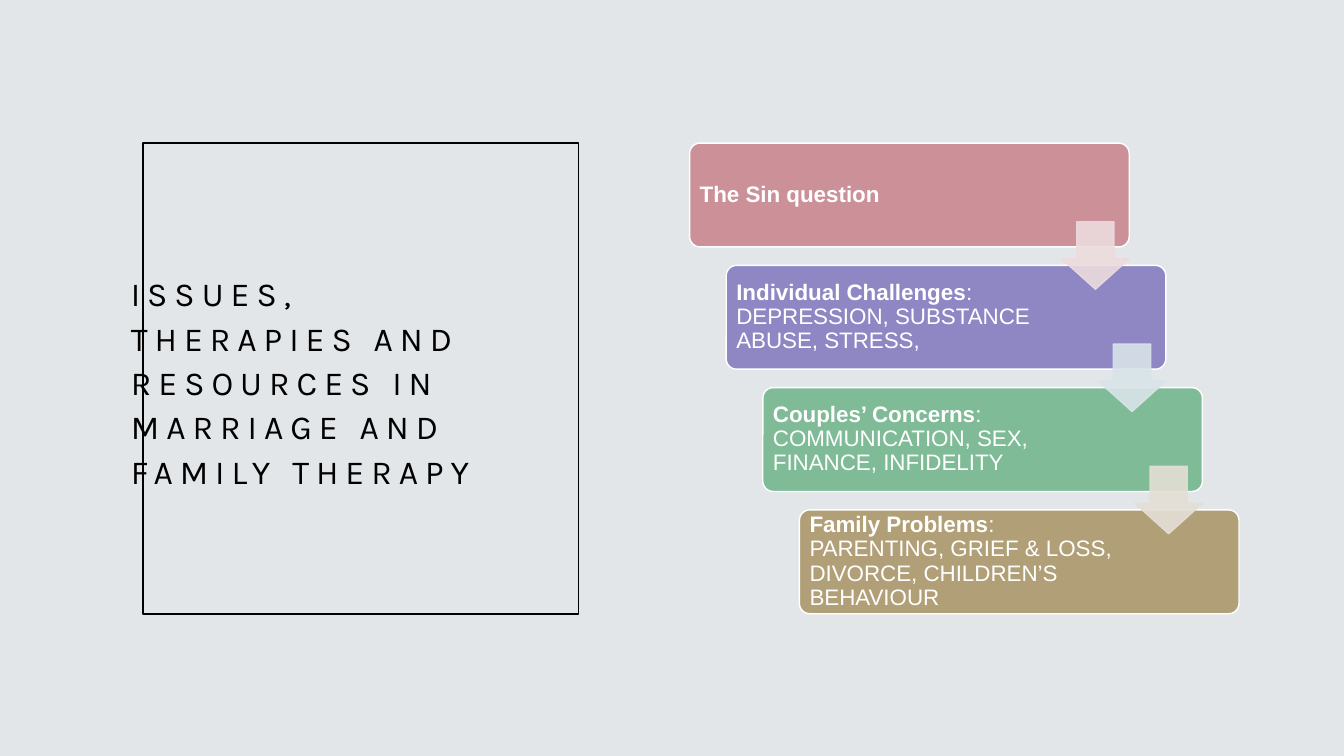
from lxml import etree
from pptx import Presentation
from pptx.dml.color import RGBColor
from pptx.enum.shapes import MSO_SHAPE
from pptx.enum.text import MSO_ANCHOR, PP_ALIGN
from pptx.oxml.ns import qn
from pptx.util import Inches, Pt

RECTANGLE = MSO_SHAPE.RECTANGLE
ROUNDED = MSO_SHAPE.ROUNDED_RECTANGLE
DOWN_ARROW = MSO_SHAPE.DOWN_ARROW
MIDDLE = MSO_ANCHOR.MIDDLE
LEFT = PP_ALIGN.LEFT

BACKGROUND = RGBColor(0xE2, 0xE6, 0xE8)
BLACK = RGBColor(0x00, 0x00, 0x00)
WHITE = RGBColor(0xFF, 0xFF, 0xFF)
ROSE = RGBColor(0xCC, 0x90, 0x99)
VIOLET = RGBColor(0x8F, 0x87, 0xC4)
GREEN = RGBColor(0x7F, 0xBB, 0x97)
TAN = RGBColor(0xB1, 0x9F, 0x77)
PALE_ROSE = RGBColor(0xEC, 0xDB, 0xDE)
PALE_BLUE = RGBColor(0xD9, 0xE4, 0xE8)
PALE_TAN = RGBColor(0xE4, 0xDF, 0xD6)

TOP = 1.42
STAIR_LEFT = 6.84
STEP_X, STEP_Y = 0.363, 1.213
CARD_WIDTH, CARD_HEIGHT = 4.36, 1.03
ARROW_SIZE = 0.67
ARROW_DROP = 0.78
CARD_INSET, ARROW_ROOM = 0.07, 1.06

TITLE = "ISSUES, THERAPIES AND RESOURCES IN MARRIAGE AND FAMILY THERAPY"
CARDS = [
    ("The Sin question", "", ROSE),
    ("Individual Challenges", ": DEPRESSION, SUBSTANCE ABUSE, STRESS,", VIOLET),
    ("Couples’ Concerns", ": COMMUNICATION, SEX, FINANCE, INFIDELITY", GREEN),
    ("Family Problems", ": PARENTING, GRIEF & LOSS, DIVORCE, CHILDREN’S BEHAVIOUR", TAN),
]
ARROW_COLORS = [PALE_ROSE, PALE_BLUE, PALE_TAN]


def add_box(slide, kind, box, fill, line):
    """Add a preset shape with a one-point outline and an optional fill."""
    shape = slide.shapes.add_shape(kind, *map(Inches, box))
    shape.shadow.inherit = False
    if fill is None:
        shape.fill.background()
    else:
        shape.fill.solid()
        shape.fill.fore_color.rgb = fill
    shape.line.color.rgb = line
    shape.line.width = Pt(1)
    return shape


def style_run(run, font, size, color, bold=False):
    """Set the font of a run."""
    run.font.name = font
    run.font.size = Pt(size)
    run.font.color.rgb = color
    run.font.bold = bold


def add_title(slide):
    """Add the frame and the widely spaced title that overlaps it."""
    add_box(slide, RECTANGLE, (TOP, TOP, 4.32, 4.67), None, BLACK)
    title = slide.shapes.add_textbox(*map(Inches, (1.2, 2.56, 3.97, 2.42)))
    frame = title.text_frame
    frame.word_wrap = True
    frame.vertical_anchor = MIDDLE
    frame.text = TITLE
    paragraph = frame.paragraphs[0]
    paragraph.line_spacing = 1.1
    run = paragraph.runs[0]
    style_run(run, "Karla", 24, BLACK)
    run.font._element.set("spc", "500")


def add_card(slide, step, heading, details, color):
    """Add one stair card with a bold heading and plain details."""
    box = (STAIR_LEFT + step * STEP_X, TOP + step * STEP_Y, CARD_WIDTH, CARD_HEIGHT)
    card = add_box(slide, ROUNDED, box, color, WHITE)
    card.adjustments[0] = 0.1
    frame = card.text_frame
    frame.word_wrap = True
    frame.vertical_anchor = MIDDLE
    frame.margin_left = frame.margin_top = frame.margin_bottom = Inches(CARD_INSET)
    frame.margin_right = Inches(ARROW_ROOM)
    paragraph = frame.paragraphs[0]
    paragraph.alignment = LEFT
    paragraph.line_spacing = 0.9
    for words, bold in ((heading, True), (details, False)):
        if words:
            run = paragraph.add_run()
            run.text = words
            style_run(run, "Arial", 16, WHITE, bold)


def add_step_arrow(slide, step, color):
    """Add the translucent arrow from one card to the next."""
    left = STAIR_LEFT + CARD_WIDTH - ARROW_SIZE + step * STEP_X
    top = TOP + ARROW_DROP + step * STEP_Y
    arrow = add_box(slide, DOWN_ARROW, (left, top, ARROW_SIZE, ARROW_SIZE), color, color)
    arrow.adjustments[0] = 0.55
    arrow.adjustments[1] = 0.45
    for tint in arrow._element.spPr.iter(qn("a:srgbClr")):
        etree.SubElement(tint, qn("a:alpha")).set("val", "90000")


def main():
    """Build the slide and save it."""
    deck = Presentation()
    deck.slide_width, deck.slide_height = Inches(13.33), Inches(7.5)
    slide = deck.slides.add_slide(deck.slide_layouts[6])
    slide.background.fill.solid()
    slide.background.fill.fore_color.rgb = BACKGROUND
    add_title(slide)
    for step, (heading, details, color) in enumerate(CARDS):
        add_card(slide, step, heading, details, color)
    for step, color in enumerate(ARROW_COLORS):
        add_step_arrow(slide, step, color)
    deck.save("out.pptx")


if __name__ == "__main__":
    main()
